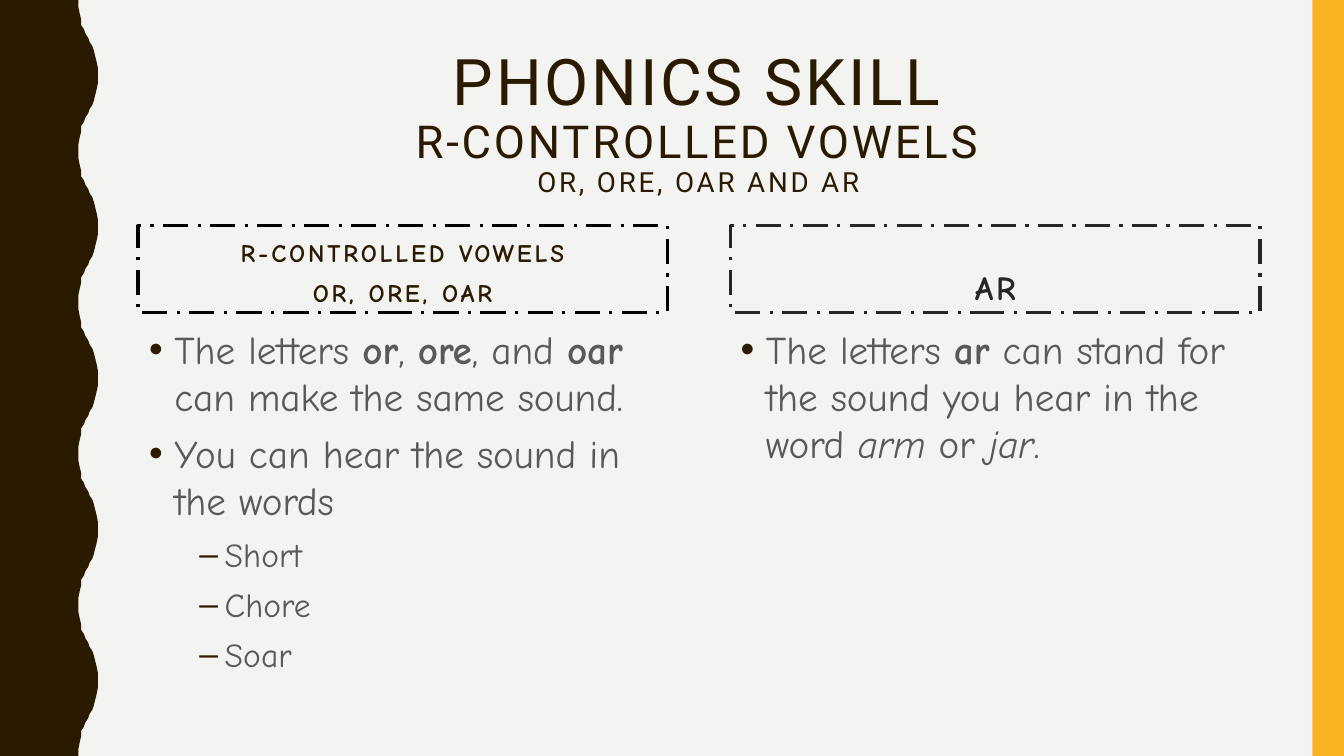
from lxml import etree
from pptx import Presentation
from pptx.dml.color import RGBColor
from pptx.enum.dml import MSO_LINE
from pptx.enum.shapes import MSO_SHAPE
from pptx.enum.text import MSO_ANCHOR, MSO_AUTO_SIZE, PP_ALIGN
from pptx.oxml.ns import qn
from pptx.util import Pt

RECT = MSO_SHAPE.RECTANGLE
DASH_DOT = MSO_LINE.LONG_DASH_DOT
MIDDLE, BOTTOM = MSO_ANCHOR.MIDDLE, MSO_ANCHOR.BOTTOM
CENTER = PP_ALIGN.CENTER
NO_FIT = MSO_AUTO_SIZE.NONE

BROWN, GOLD, PAPER = "2A1A00", "F8B323", "F3F3F2"
BLACK, DARK, GREY = "000000", "262626", "595959"
HAND, SANS = "Comic Neue", "Roboto"
WIDTH, HEIGHT = 960, 540


def rgb(code):
    return RGBColor.from_string(code)


def add_run(p, text, size, font, color, bold=False, italic=False, spacing=0):
    r = p.add_run()
    r.text = text
    r.font.size = Pt(size)
    r.font.name = font
    r.font.color.rgb = rgb(color)
    r.font.bold = bold
    r.font.italic = italic
    if spacing:
        r._r.get_or_add_rPr().set("spc", str(spacing * 100))


prs = Presentation()
prs.slide_width, prs.slide_height = Pt(WIDTH), Pt(HEIGHT)
s = prs.slides.add_slide(prs.slide_layouts[5])
s.background.fill.solid()
s.background.fill.fore_color.rgb = rgb(PAPER)

rise = [(56.2, 0), (56.2, 5), (56.9, 10), (57.6, 14.4), (58.3, 18),
        (59.8, 20.9), (61.2, 23.8), (62.6, 27.4), (64.1, 30.2), (65.5, 33.1),
        (67, 36), (68.4, 39.6), (69.1, 43.9), (69.8, 49), (69.8, 54)]
period = 108
wave = rise + [(x, period - y) for x, y in reversed(rise[:-1])]
edge = [(x, y + n * period) for n in range(HEIGHT // period) for x, y in wave]
builder = s.shapes.build_freeform(0, 0, scale=Pt(1))
builder.add_line_segments(edge + [(0, HEIGHT)], close=True)
border = builder.convert_to_shape()
stripe = s.shapes.add_shape(RECT, Pt(937.5), 0, Pt(22.5), Pt(HEIGHT))
for sp, color in ((border, BROWN), (stripe, GOLD)):
    sp.shadow.inherit = False
    sp.fill.solid()
    sp.fill.fore_color.rgb = rgb(color)
    sp.line.fill.background()

title = s.shapes.title
title.left, title.top, title.width, title.height = Pt(98.6), Pt(30.2), Pt(800.6), Pt(117.4)
tf = title.text_frame
tf.auto_size = NO_FIT
tf.word_wrap = True
tf.vertical_anchor = MIDDLE
p = tf.paragraphs[0]
p.alignment = CENTER
p.line_spacing = 0.9
title_lines = [("PHONICS SKILL", 45.9), ("R-CONTROLLED VOWELS", 32.4),
               ("OR, ORE, OAR AND AR", 19.8)]
for i, (text, size) in enumerate(title_lines):
    if i:
        p.add_line_break()
    add_run(p, text, size, SANS, BROWN, spacing=2)

headers = [
    (98.6, BLACK, BROWN, 18, ["R-CONTROLLED VOWELS", "OR, ORE, OAR"]),
    (522, DARK, DARK, 24, ["AR"]),
]
for left, line_color, color, size, lines in headers:
    sp = s.shapes.add_shape(RECT, Pt(left), Pt(161.3), Pt(378), Pt(61.9))
    sp.shadow.inherit = False
    sp.fill.background()
    sp.line.color.rgb = rgb(line_color)
    sp.line.width = Pt(2.25)
    sp.line.dash_style = DASH_DOT
    tf = sp.text_frame
    tf.word_wrap = True
    tf.vertical_anchor = BOTTOM
    for i, text in enumerate(lines):
        p = tf.add_paragraph() if i else tf.paragraphs[0]
        p.alignment = CENTER
        p.space_before = Pt(7)
        add_run(p, text, size, HAND, color, bold=True, spacing=2)

columns = [
    (99.4, 293, [
        (0, [("The letters ", ""), ("or", "b"), (", ", ""), ("ore", "b"),
             (", and ", ""), ("oar", "b"), (" can make the same sound.", "")]),
        (0, [("You can hear the sound in the words", "")]),
        (1, [("Short", "")]),
        (1, [("Chore", "")]),
        (1, [("Soar", "")]),
    ]),
    (522, 236.2, [
        (0, [("The letters ", ""), ("ar", "b"),
             (" can stand for the sound you hear in the word ", ""),
             ("arm ", "i"), ("or", ""), (" jar", "i"), (".", "")]),
    ]),
]
levels = [("•", 18, 28), ("–", 54, 24)]
for left, height, items in columns:
    tf = s.shapes.add_textbox(Pt(left), Pt(229), Pt(378), Pt(height)).text_frame
    tf.word_wrap = True
    for i, (level, runs) in enumerate(items):
        bullet, margin, size = levels[level]
        p = tf.add_paragraph() if i else tf.paragraphs[0]
        p.level = level
        p.space_before = Pt(7)
        pPr = p._p.get_or_add_pPr()
        pPr.set("marL", str(Pt(margin)))
        pPr.set("indent", str(Pt(-18)))
        bullet_color = etree.SubElement(pPr, qn("a:buClr"))
        etree.SubElement(bullet_color, qn("a:srgbClr"), val=BROWN)
        etree.SubElement(pPr, qn("a:buFont"), typeface="Arial")
        etree.SubElement(pPr, qn("a:buChar"), char=bullet)
        for text, style in runs:
            add_run(p, text, size, HAND, GREY, style == "b", style == "i")

prs.save("out.pptx")
